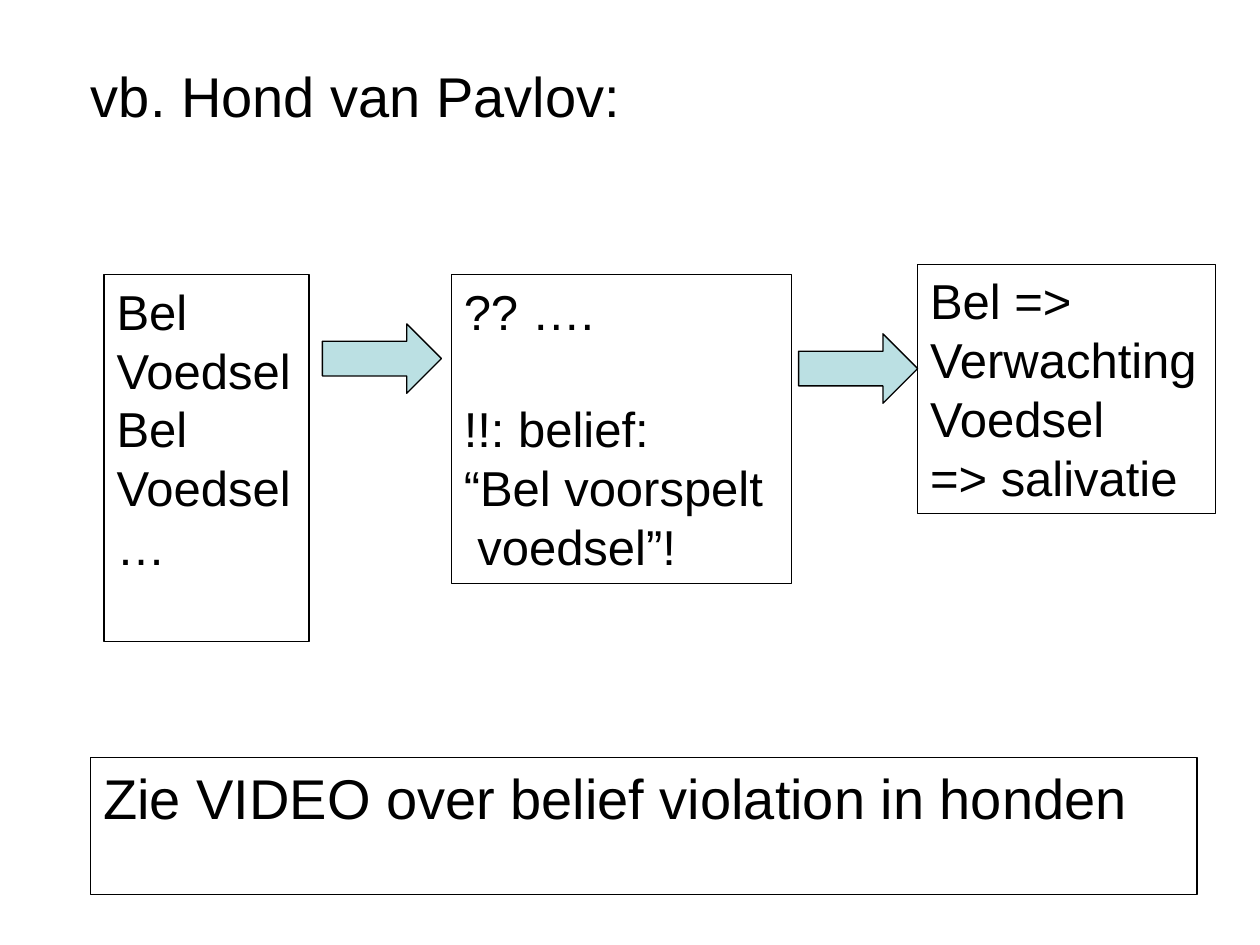
from pptx import Presentation
from pptx.dml.color import RGBColor
from pptx.enum.shapes import MSO_SHAPE
from pptx.enum.text import MSO_ANCHOR, PP_ALIGN
from pptx.util import Cm, Pt

RECT = MSO_SHAPE.RECTANGLE
ARROW = MSO_SHAPE.RIGHT_ARROW
TOP = MSO_ANCHOR.TOP
LEFT = PP_ALIGN.LEFT


def color(code):
    return RGBColor.from_string(code)


class Deck:
    ink = "000000"
    tint = "BBE0E3"
    font = "Arial"
    frame = {
        "word_wrap": True,
        "vertical_anchor": TOP,
        "margin_left": Cm(0.25),
        "margin_right": Cm(0.25),
        "margin_top": Cm(0.13),
        "margin_bottom": Cm(0.13),
    }

    def __init__(self, slide):
        self.slide = slide

    def style(self, item, form):
        for name, value in form.items():
            setattr(item, name, value)

    def label(self, shape, lines, size, gaps):
        body = shape.text_frame
        self.style(body, self.frame)
        body.text = "\n".join(lines)
        for row, para in enumerate(body.paragraphs):
            self.style(para, {"alignment": LEFT, "space_before": Pt(gaps.get(row, 0))})
            self.style(para.font, {"name": self.font, "size": Pt(size)})
            para.font.color.rgb = color(self.ink)

    def shape(self, kind, area):
        shape = self.slide.shapes.add_shape(kind, *map(Cm, area))
        shape.shadow.inherit = False
        shape.line.color.rgb = color(self.ink)
        shape.line.width = Pt(0.75)
        return shape

    def title(self, text, area, size=32):
        shape = self.slide.shapes.add_textbox(*map(Cm, area))
        self.label(shape, [text], size, {})

    def box(self, lines, area, size=28, gaps={}):
        shape = self.shape(RECT, area)
        shape.fill.background()
        self.label(shape, lines, size, gaps)

    def arrow(self, left, top):
        shape = self.shape(ARROW, (left, top, 2.4, 1.4))
        shape.fill.solid()
        shape.fill.fore_color.rgb = color(self.tint)


def main():
    show = Presentation()
    show.slide_width, show.slide_height = Cm(25.4), Cm(19.05)
    deck = Deck(show.slides.add_slide(show.slide_layouts[6]))

    deck.title(" vb. Hond van Pavlov:", (1.27, 1.12, 22.86, 15.9))
    deck.box(["Bel", "Voedsel", "Bel", "Voedsel", "…"], (2.1, 5.54, 4.13, 7.4))
    deck.box(
        ["?? ….", "!!: belief:", "“Bel voorspelt", " voedsel”!"],
        (9.1, 5.54, 6.86, 6.22),
        gaps={1: 33.5},
    )
    deck.box(
        ["Bel =>", "Verwachting", "Voedsel", "=> salivatie"],
        (18.5, 5.33, 6, 5.03),
    )
    deck.arrow(6.5, 6.53)
    deck.arrow(16.1, 6.73)
    deck.box(
        ["Zie VIDEO over belief violation in honden"],
        (1.83, 15.27, 22.3, 2.77),
        size=32,
    )
    show.save("out.pptx")


if __name__ == "__main__":
    main()
